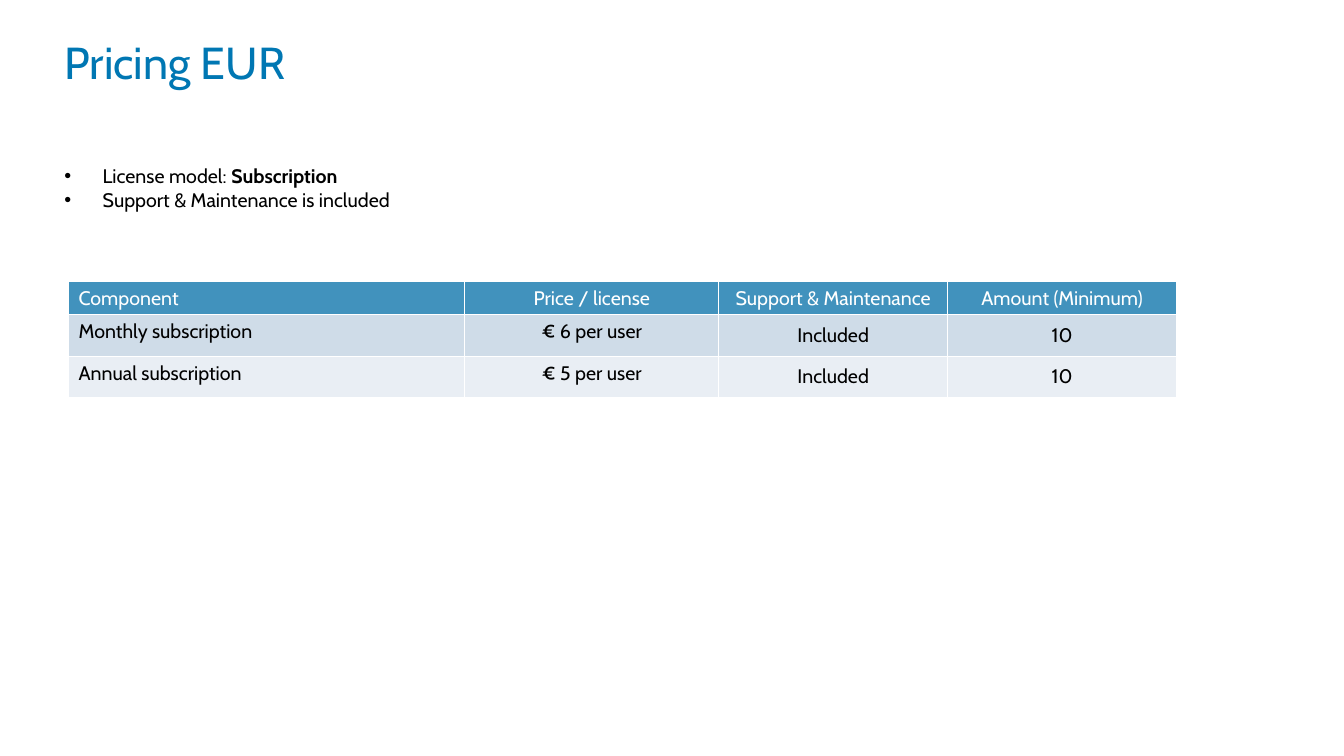
from lxml.etree import SubElement
from pptx import Presentation
from pptx.dml.color import RGBColor
from pptx.enum.text import MSO_ANCHOR, PP_ALIGN
from pptx.oxml.ns import qn
from pptx.util import Inches, Pt

TITLE_BLUE = RGBColor(0x00, 0x77, 0xB3)
HEADER_BLUE = RGBColor(0x41, 0x92, 0xBD)
BAND_DARK = RGBColor(0xCF, 0xDC, 0xE8)
BAND_LIGHT = RGBColor(0xE9, 0xEE, 0xF4)
WHITE = RGBColor(0xFF, 0xFF, 0xFF)
BLACK = RGBColor(0x00, 0x00, 0x00)


def add_text(paragraph, text, size=14, color=BLACK, bold=False, align=PP_ALIGN.LEFT):
    paragraph.alignment = align
    run = paragraph.add_run()
    run.text = text
    run.font.name = "Cabin"
    run.font.size = Pt(size)
    run.font.bold = bold
    run.font.color.rgb = color


presentation = Presentation()
presentation.slide_width = Inches(13.33)
presentation.slide_height = Inches(7.5)
slide = presentation.slides.add_slide(presentation.slide_layouts[6])

title = slide.shapes.add_textbox(Inches(0.54), Inches(0.36), Inches(12.25), Inches(0.6))
title.text_frame.word_wrap = True
title_paragraph = title.text_frame.paragraphs[0]
title_paragraph.line_spacing = 0.9
add_text(title_paragraph, "Pricing EUR", size=32, color=TITLE_BLUE)

terms = slide.shapes.add_textbox(Inches(0.54), Inches(1.58), Inches(11.26), Inches(0.57))
terms.text_frame.word_wrap = True
bullets = [
    [("License model: ", False), ("Subscription", True)],
    [("Support & Maintenance is included", False)],
]
for index, runs in enumerate(bullets):
    paragraph = terms.text_frame.paragraphs[0] if index == 0 else terms.text_frame.add_paragraph()
    properties = paragraph._p.get_or_add_pPr()
    properties.set("marL", str(Inches(0.38)))
    properties.set("indent", str(-Inches(0.38)))
    SubElement(properties, qn("a:buFont")).set("typeface", "Arial")
    SubElement(properties, qn("a:buChar")).set("char", "•")
    for text, bold in runs:
        add_text(paragraph, text, bold=bold)

rows = [
    ("Component", "Price / license", "Support & Maintenance", "Amount (Minimum)"),
    ("Monthly subscription", "€ 6 per user", "Included", "10"),
    ("Annual subscription", "€ 5 per user", "Included", "10"),
]
row_heights = [0.33, 0.41, 0.41]
row_fills = [HEADER_BLUE, BAND_DARK, BAND_LIGHT]
column_widths = [3.93, 2.52, 2.27, 2.27]

table = slide.shapes.add_table(
    len(rows), len(column_widths), Inches(0.68), Inches(2.79),
    Inches(sum(column_widths)), Inches(sum(row_heights)),
).table
for column, width in zip(table.columns, column_widths):
    column.width = Inches(width)
for row_index, values in enumerate(rows):
    table.rows[row_index].height = Inches(row_heights[row_index])
    for column_index, value in enumerate(values):
        cell = table.cell(row_index, column_index)
        cell.fill.solid()
        cell.fill.fore_color.rgb = row_fills[row_index]
        if row_index > 0 and column_index > 1:
            cell.vertical_anchor = MSO_ANCHOR.MIDDLE
        add_text(
            cell.text_frame.paragraphs[0], value,
            color=WHITE if row_index == 0 else BLACK,
            align=PP_ALIGN.LEFT if column_index == 0 else PP_ALIGN.CENTER,
        )

presentation.save("out.pptx")
